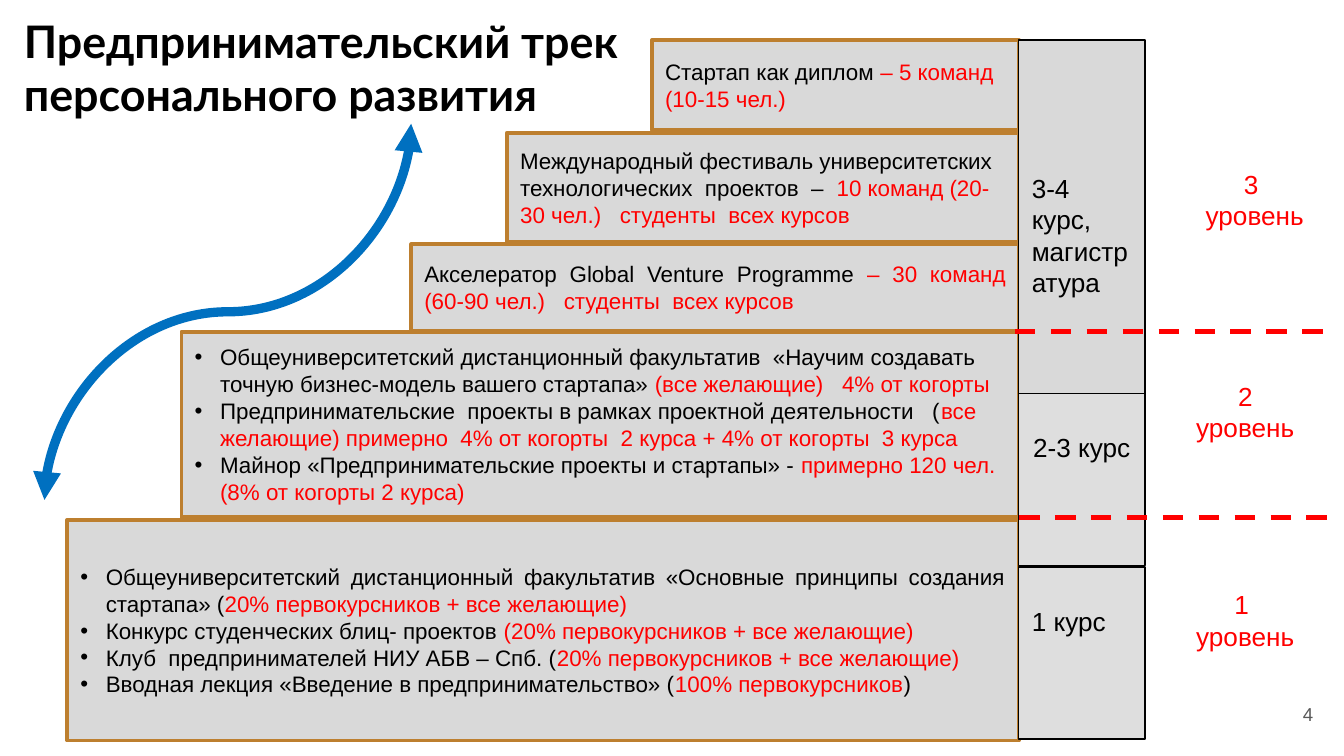
from lxml import etree
from pptx import Presentation
from pptx.dml.color import RGBColor
from pptx.enum.dml import MSO_LINE
from pptx.enum.shapes import MSO_CONNECTOR as CONN, MSO_SHAPE as SHAPE
from pptx.enum.text import MSO_ANCHOR as ANCHOR, MSO_AUTO_SIZE as AUTO, PP_ALIGN as ALIGN
from pptx.oxml.ns import qn
from pptx.util import Cm, Pt

COLORS = {
    "black": "000000", "red": "FF0000", "blue": "0070C0", "gray": "595959",
    "step": "D9D9D9", "course": "DEDEDE", "border": "BD7F2F",
}

# indent, offset from the top, height (cm), alignment, bulleted, paragraphs;
# each paragraph alternates black and red parts
STEPS = [
    (11.05, 0, 1.7, ALIGN.LEFT, False, [
        ("Стартап как диплом ", "– 5 команд (10-15 чел.)")]),
    (8.31, 1.75, 2.06, ALIGN.LEFT, False, [
        ("Международный фестиваль университетских технологических  проектов  –  ",
         "10 команд (20-30 чел.)   студенты  всех курсов")]),
    (6.5, 3.86, 1.63, ALIGN.JUSTIFY, False, [
        ("Акселератор Global Venture Programme ",
         "– 30 команд (60-90 чел.)   студенты  всех курсов")]),
    (2.16, 5.51, 3.5, ALIGN.LEFT, True, [
        ("Общеуниверситетский дистанционный факультатив  «Научим создавать точную "
         "бизнес-модель вашего стартапа» ", "(все желающие)   4% от когорты"),
        ("Предпринимательские  проекты в рамках проектной деятельности   (",
         "все желающие) примерно  4% от когорты  2 курса + 4% от когорты  3 курса"),
        ("Майнор «Предпринимательские проекты и стартапы» - ",
         "примерно 120 чел. (8% от когорты 2 курса)")]),
    (0, 9.07, 4.17, ALIGN.JUSTIFY, True, [
        ("Общеуниверситетский дистанционный факультатив «Основные принципы создания "
         "стартапа» (", "20% первокурсников + все желающие)"),
        ("Конкурс студенческих блиц- проектов ", "(20% первокурсников + все желающие)"),
        ("Клуб  предпринимателей НИУ АБВ – Спб. (", "20% первокурсников + все желающие)"),
        ("Вводная лекция «Введение в предпринимательство» (", "100% первокурсников", ")")]),
]

# offset from the top, height, top margin (cm), fill, alignment, text
COURSES = [
    (0, 6.83, 2.5, "step", ALIGN.LEFT, "3-4 курс, магистратура"),
    (6.68, 3.25, 0.72, "course", ALIGN.CENTER, "2-3 курс"),
    (9.96, 3.25, 0.72, "course", ALIGN.LEFT, "1 курс"),
]

# left, top, width (cm) within the level area, text
LEVELS = [
    (0.15, 0, 2.79, "3 \nуровень"),
    (0.08, 4.01, 2.57, "2 уровень"),
    (0.08, 7.95, 2.57, "1 \nуровень"),
]


def rgb(name):
    return RGBColor.from_string(COLORS[name])


def style(font, size, color="black", name="Arial"):
    font.name, font.size, font.color.rgb = name, Pt(size), rgb(color)


def add_box(s, x, y, w, h, fill, line, width):
    sp = s.shapes.add_shape(SHAPE.RECTANGLE, Cm(x), Cm(y), Cm(w), Cm(h))
    sp.shadow.inherit = False
    sp.fill.solid()
    sp.fill.fore_color.rgb = rgb(fill)
    sp.line.color.rgb = rgb(line)
    sp.line.width = Pt(width)
    sp.text_frame.word_wrap = True
    return sp


def add_label(s, x, y, w, h, text, size, color, align):
    tf = s.shapes.add_textbox(Cm(x), Cm(y), Cm(w), Cm(h)).text_frame
    tf.word_wrap = True
    tf.text = text
    for p in tf.paragraphs:
        p.alignment = align
        for r in p.runs:
            style(r.font, size, color)
    return tf


def add_bullet(p):
    pPr = p._p.get_or_add_pPr()
    pPr.set("marL", str(Cm(0.48)))
    pPr.set("indent", str(-Cm(0.48)))
    clr = etree.SubElement(pPr, qn("a:buClr"))
    etree.SubElement(clr, qn("a:srgbClr"), val=COLORS["black"])
    etree.SubElement(pPr, qn("a:buFont"), typeface="Arial")
    etree.SubElement(pPr, qn("a:buChar"), char="•")


def add_line(s, kind, x1, y1, x2, y2, color, width):
    c = s.shapes.add_connector(kind, Cm(x1), Cm(y1), Cm(x2), Cm(y2))
    c.line.color.rgb = rgb(color)
    c.line.width = Pt(width)
    etree.SubElement(c._element.spPr, qn("a:effectLst"))
    return c


def add_title(s, x, y, w, h):
    title = s.shapes.title
    title.left, title.top, title.width, title.height = Cm(x), Cm(y), Cm(w), Cm(h)
    tf = title.text_frame
    tf.text = "Предпринимательский трек персонального развития"
    tf.word_wrap, tf.auto_size, tf.vertical_anchor = True, AUTO.NONE, ANCHOR.TOP
    tf.margin_left = tf.margin_right = tf.margin_top = tf.margin_bottom = Cm(0.25)
    p = tf.paragraphs[0]
    p.alignment = ALIGN.LEFT
    style(p.runs[0].font, 24, name="Lato")
    p.runs[0].font.bold = True


def add_staircase(s, x, y, w):
    """Steps share the right edge of the box and grow wider downwards."""
    for indent, offset, h, align, bulleted, paragraphs in STEPS:
        sp = add_box(s, x + indent, y + offset, w - indent, h, "step", "border", 2)
        tf = sp.text_frame
        tf.vertical_anchor = ANCHOR.MIDDLE
        for i, parts in enumerate(paragraphs):
            p = tf.add_paragraph() if i else tf.paragraphs[0]
            p.alignment = align
            if bulleted:
                add_bullet(p)
            for j, part in enumerate(parts):
                r = p.add_run()
                r.text = part
                style(r.font, 12, "red" if j % 2 else "black")


def add_courses(s, x, y, w):
    for offset, h, margin, fill, align, text in COURSES:
        tf = add_box(s, x, y + offset, w, h, fill, "black", 0.75).text_frame
        tf.vertical_anchor = ANCHOR.TOP
        tf.margin_top = Cm(margin)
        tf.text = text
        p = tf.paragraphs[0]
        p.alignment = align
        style(p.runs[0].font, 14)


def add_levels(s, x, y):
    for dx, dy, w, text in LEVELS:
        add_label(s, x + dx, y + dy, w, 1.45, text, 14, "red", ALIGN.CENTER)


def add_dividers(s, x, y, w):
    for dx, dy in ((0, 0), (0.08, 3.51)):
        c = add_line(s, CONN.STRAIGHT, x + dx, y + dy, x + dx + w, y + dy, "red", 2.75)
        c.line.dash_style = MSO_LINE.DASH


def add_growth_arrow(s, x, y, w, h):
    """S-curve from top right to bottom left, turned so that its ends are vertical."""
    left, top = x + (w - h) / 2, y + (h - w) / 2
    c = add_line(s, CONN.CURVE, left, top, left + h, top + w, "blue", 5)
    c._element.spPr.find(qn("a:xfrm")).set("rot", str(90 * 60000))
    ln = c.line._get_or_add_ln()
    for end in ("a:headEnd", "a:tailEnd"):
        etree.SubElement(ln, qn(end), type="triangle")


def main():
    prs = Presentation()
    prs.slide_width, prs.slide_height = Cm(25.4), Cm(14.29)
    s = prs.slides.add_slide(prs.slide_layouts[5])
    add_title(s, 0.2, 0, 12.75, 1.6)
    add_staircase(s, 1.27, 0.76, 17.99)
    add_levels(s, 22.17, 3.05)
    add_growth_arrow(s, 0.84, 2.34, 6.93, 7.11)
    add_courses(s, 19.25, 0.76, 2.39)
    add_dividers(s, 19.18, 6.27, 5.89)
    number = add_label(s, 23.55, 12.95, 1.52, 1.09, "4", 10, "gray", ALIGN.RIGHT)
    number.vertical_anchor = ANCHOR.MIDDLE
    prs.save("out.pptx")


if __name__ == "__main__":
    main()
